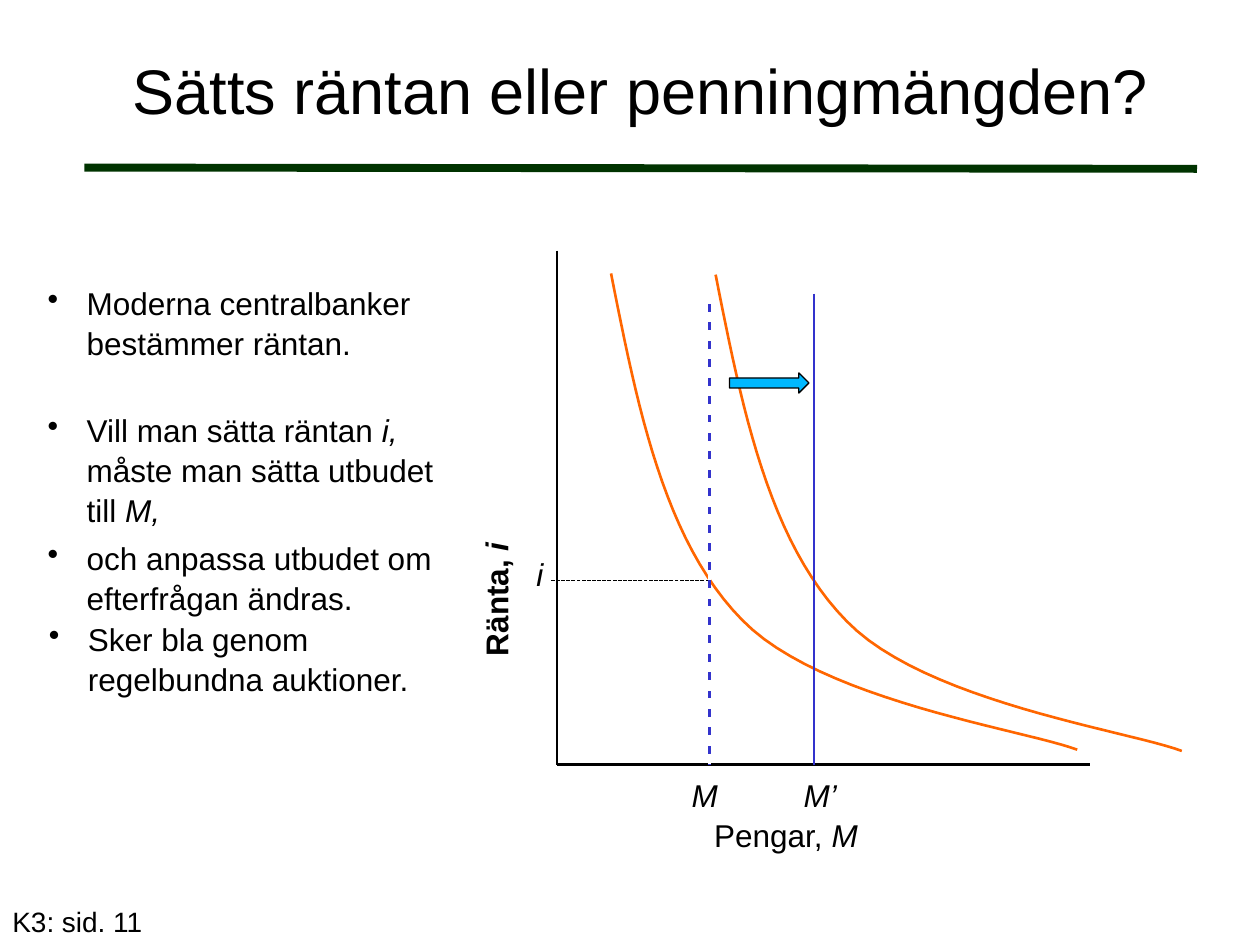
from lxml import etree
from pptx import Presentation
from pptx import util as u
from pptx.dml.color import RGBColor
from pptx.enum import dml, shapes, text
from pptx.oxml.ns import qn

I = u.Inches
COLORS = {"black": "000000", "white": "FFFFFF", "rule": "003300",
          "demand": "FF6600", "supply": "3333CC", "shift": "00B8FF"}


def rgb(name):
    return RGBColor.from_string(COLORS[name])


class Deck:
    """Holds the text style and the current slide."""
    font = "Arial"
    size = 18

    def __init__(self, prs):
        self.s = prs.slides.add_slide(prs.slide_layouts[6])

    def line(self, x1, y1, x2, y2, color="black", width=1.5, dash=None):
        c = self.s.shapes.add_connector(
            shapes.MSO_CONNECTOR.STRAIGHT, I(x1), I(y1), I(x2), I(y2))
        c.line.color.rgb = rgb(color)
        c.line.width = u.Pt(width)
        if dash:
            c.line.dash_style = dash
        etree.SubElement(c._element.spPr, qn("a:effectLst"))

    def text(self, x, y, w, h, *paras, size=None, bold=False, align=None,
             wrap=True, middle=False, bullets=False, rotation=0):
        """Each paragraph is a list of runs; a run starting with * is italic."""
        sp = self.s.shapes.add_textbox(I(x), I(y), I(w), I(h))
        sp.rotation = rotation
        tf = sp.text_frame
        tf.word_wrap = wrap
        if middle:
            tf.vertical_anchor = text.MSO_ANCHOR.MIDDLE
        for n, runs in enumerate(paras):
            p = tf.add_paragraph() if n else tf.paragraphs[0]
            p.font.name = self.font
            p.font.size = u.Pt(size or self.size)
            p.font.bold = bold
            p.font.color.rgb = rgb("black")
            if align:
                p.alignment = align
            if bullets:
                self.bullet(p)
            for run in runs:
                if run == "\n":
                    p.add_line_break()
                    continue
                r = p.add_run()
                r.text = run.lstrip("*")
                if run.startswith("*"):
                    r.font.italic = True

    def bullet(self, p):
        p.space_before = p.space_after = u.Pt(2.5)
        p.line_spacing = 1.05
        pPr = p._p.get_or_add_pPr()
        pPr.set("marL", str(I(0.31)))
        pPr.set("indent", str(-I(0.31)))
        bu = etree.Element(qn("a:buChar"), char="•")
        pPr.find(qn("a:defRPr")).addprevious(bu)

    def curve(self, start, *beziers, color, steps=24):
        """Draw joined cubic Béziers, each given as two handles and an end."""
        points, p0 = [], start
        for p1, p2, p3 in beziers:
            for k in range(1, steps + 1):
                t = k / steps
                points.append(tuple(
                    I((1-t)**3*a + 3*t*(1-t)**2*b + 3*t*t*(1-t)*c + t**3*d)
                    for a, b, c, d in zip(p0, p1, p2, p3)))
            p0 = p3
        fb = self.s.shapes.build_freeform(I(start[0]), I(start[1]))
        fb.add_line_segments(points, close=False)
        sp = fb.convert_to_shape()
        sp.shadow.inherit = False
        sp.fill.background()
        sp.line.color.rgb = rgb(color)
        sp.line.width = u.Pt(1.5)

    def arrow(self, x, y, w, h, color):
        sp = self.s.shapes.add_shape(
            shapes.MSO_SHAPE.RIGHT_ARROW, I(x), I(y), I(w), I(h))
        sp.shadow.inherit = False
        sp.fill.solid()
        sp.fill.fore_color.rgb = rgb(color)
        sp.line.color.rgb = rgb("black")
        sp.line.width = u.Pt(0.75)


def main():
    prs = Presentation()
    prs.slide_width, prs.slide_height = I(10), I(7.5)
    d = Deck(prs)

    d.line(0.67, 1.33, 9.5, 1.34, "rule", 4.5)
    d.text(0.67, 0.08, 8.83, 1.25, ["Sätts räntan eller penningmängden?"],
           size=36, align=text.PP_ALIGN.CENTER, middle=True)

    d.text(0.28, 2.19, 3.67, 0.77,
           ["Moderna centralbanker bestämmer räntan."], bullets=True)
    d.text(0.28, 3.2, 3.67, 0.77,
           ["Vill man sätta räntan ", "*i, ", "måste man sätta utbudet", "\n",
            "till ", "*M,"],
           ["och anpassa utbudet om efterfrågan ändras."], bullets=True)
    d.text(0.29, 4.86, 3.67, 0.87,
           ["Sker bla genom regelbundna auktioner."], bullets=True)

    # Axes
    left, bottom, old, new, rate = 4.42, 6.07, 5.63, 6.46, 4.61
    d.line(left, 1.99, left, bottom)
    d.line(8.65, bottom, left, bottom)
    d.text(3.01, 4.18, 1.85, 0.4, ["Ränta, ", "*i"], bold=True, rotation=270)
    d.text(5.57, 6.43, 2.77, 0.41, ["Pengar, ", "*M"])

    # Money demand before and after the shift
    demand = [(4.85, 2.17), (5.06, 3.23), (5.27, 4.29), (5.89, 4.92),
              (6.51, 5.56), (8.12, 5.79), (8.55, 5.95)]
    for dx, dy in ((0, 0), (0.83, 0.01)):
        pts = [(x + dx, y + dy) for x, y in demand]
        d.curve(pts[0], pts[1:4], pts[4:7], color="demand")

    # Interest rate and money supply
    d.line(old, rate, 4.37, rate, width=0.75, dash=dml.MSO_LINE.SQUARE_DOT)
    d.text(4.16, 4.36, 0.26, 0.4, ["*i"], wrap=False)
    for x in (old, new):
        d.line(x, 2.33, x, bottom, "supply")
    d.line(old, 2.33, old, bottom, "white", dash=dml.MSO_LINE.DASH)
    d.text(5.39, 6.11, 0.41, 0.4, ["*M"], wrap=False)
    d.text(6.28, 6.11, 0.47, 0.4, ["*M’"], wrap=False)
    d.arrow(5.79, 2.96, 0.63, 0.16, "shift")

    d.text(0, 7.13, 2.08, 0.37, ["K3: sid. 11"], size=16)
    prs.save("out.pptx")


if __name__ == "__main__":
    main()
